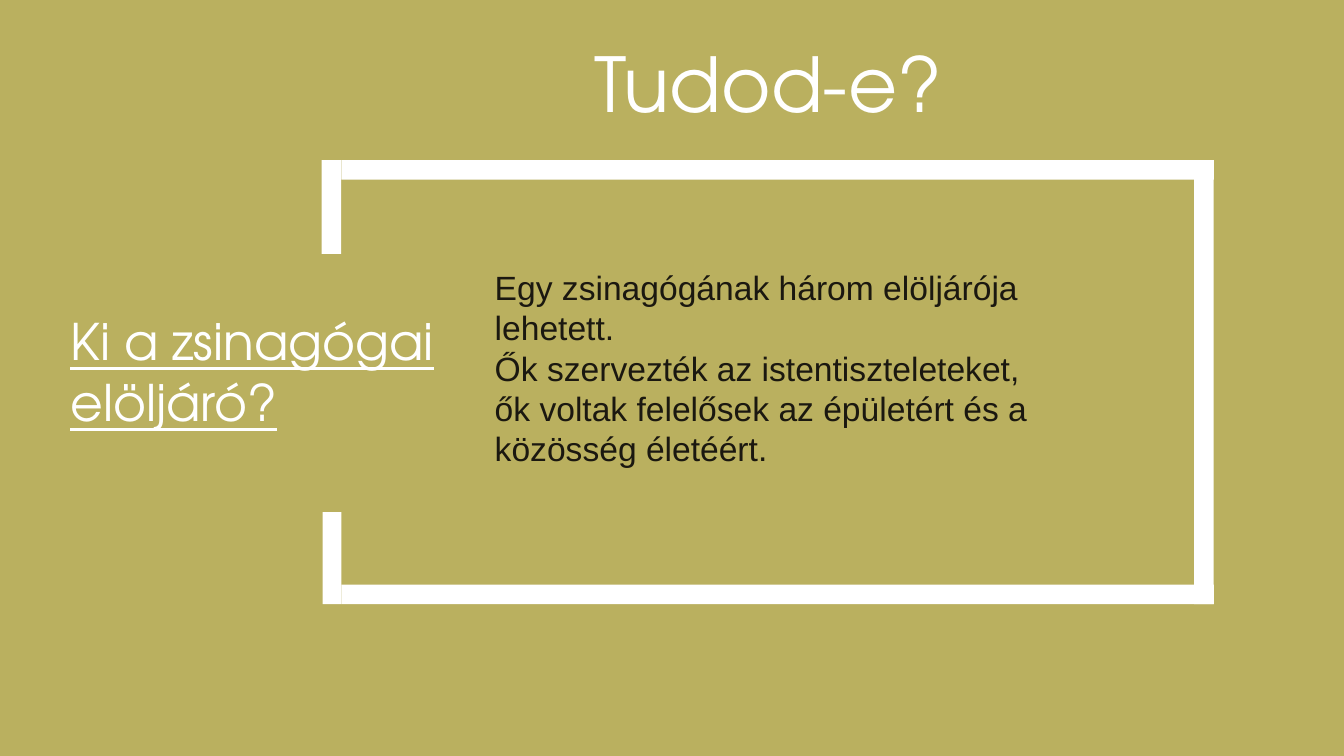
from pptx import Presentation
from pptx.dml.color import RGBColor
from pptx.enum.shapes import MSO_SHAPE
from pptx.enum.text import MSO_ANCHOR, MSO_AUTO_SIZE, PP_ALIGN
from pptx.util import Pt

RECT = MSO_SHAPE.RECTANGLE
TOP = MSO_ANCHOR.TOP
NO_FIT = MSO_AUTO_SIZE.NONE
LEFT = PP_ALIGN.LEFT

OLIVE, WHITE, DARK = "BAB05F", "FFFFFF", "1B1810"
HEADING_FONT, BODY_FONT = "TeX Gyre Adventor", "Arial"


def paint(fill, color):
    fill.solid()
    fill.fore_color.rgb = RGBColor.from_string(color)


def write(sp, lines, font, size, color, underline=False):
    tf = sp.text_frame
    tf.word_wrap = True
    tf.auto_size = NO_FIT
    tf.vertical_anchor = TOP
    for i, line in enumerate(lines):
        p = tf.add_paragraph() if i else tf.paragraphs[0]
        p.alignment = LEFT
        r = p.add_run()
        r.text = line
        r.font.name = font
        r.font.size = Pt(size)
        r.font.underline = underline
        paint(r.font.fill, color)


def add_text(s, box, lines, font, size, color, underline=False):
    sp = s.shapes.add_textbox(*map(Pt, box))
    write(sp, lines, font, size, color, underline)


def add_bar(s, left, top, right, bottom):
    sp = s.shapes.add_shape(RECT, Pt(left), Pt(top), Pt(right - left), Pt(bottom - top))
    sp.shadow.inherit = False
    paint(sp.fill, WHITE)
    sp.line.fill.background()


def add_title(s, box, text):
    sp = s.shapes.title
    sp.left, sp.top, sp.width, sp.height = map(Pt, box)
    write(sp, [text], HEADING_FONT, 54, WHITE)


def add_open_frame(s):
    left, top, right, bottom = 229.8, 114.4, 867, 431.6
    thick = 14
    inner = left + thick
    add_bar(s, inner, top, right, top + thick)
    add_bar(s, inner, bottom - thick, right, bottom)
    add_bar(s, right - thick, top, right, bottom)
    # Left side stays open around the question
    add_bar(s, left, top, inner, 181.4)
    add_bar(s, left + 0.7, 365.8, inner, bottom)


def main():
    prs = Presentation()
    prs.slide_width, prs.slide_height = Pt(960), Pt(540)
    s = prs.slides.add_slide(prs.slide_layouts[5])
    paint(s.background.fill, OLIVE)

    add_title(s, (417.6, 23, 332, 72.7), "Tudod-e?")
    add_open_frame(s)

    # Answer and question
    add_text(s, (346.3, 187.2, 418.3, 152.6), [
        "Egy zsinagógának három elöljárója lehetett.",
        "Ők szervezték az istentiszteleteket, ők voltak felelősek az épületért és a közösség életéért.",
    ], BODY_FONT, 24, DARK)
    add_text(s, (43.2, 218.2, 332, 94.3), ["Ki a zsinagógai", "elöljáró?"],
             HEADING_FONT, 36, WHITE, underline=True)

    prs.save("out.pptx")


if __name__ == "__main__":
    main()
